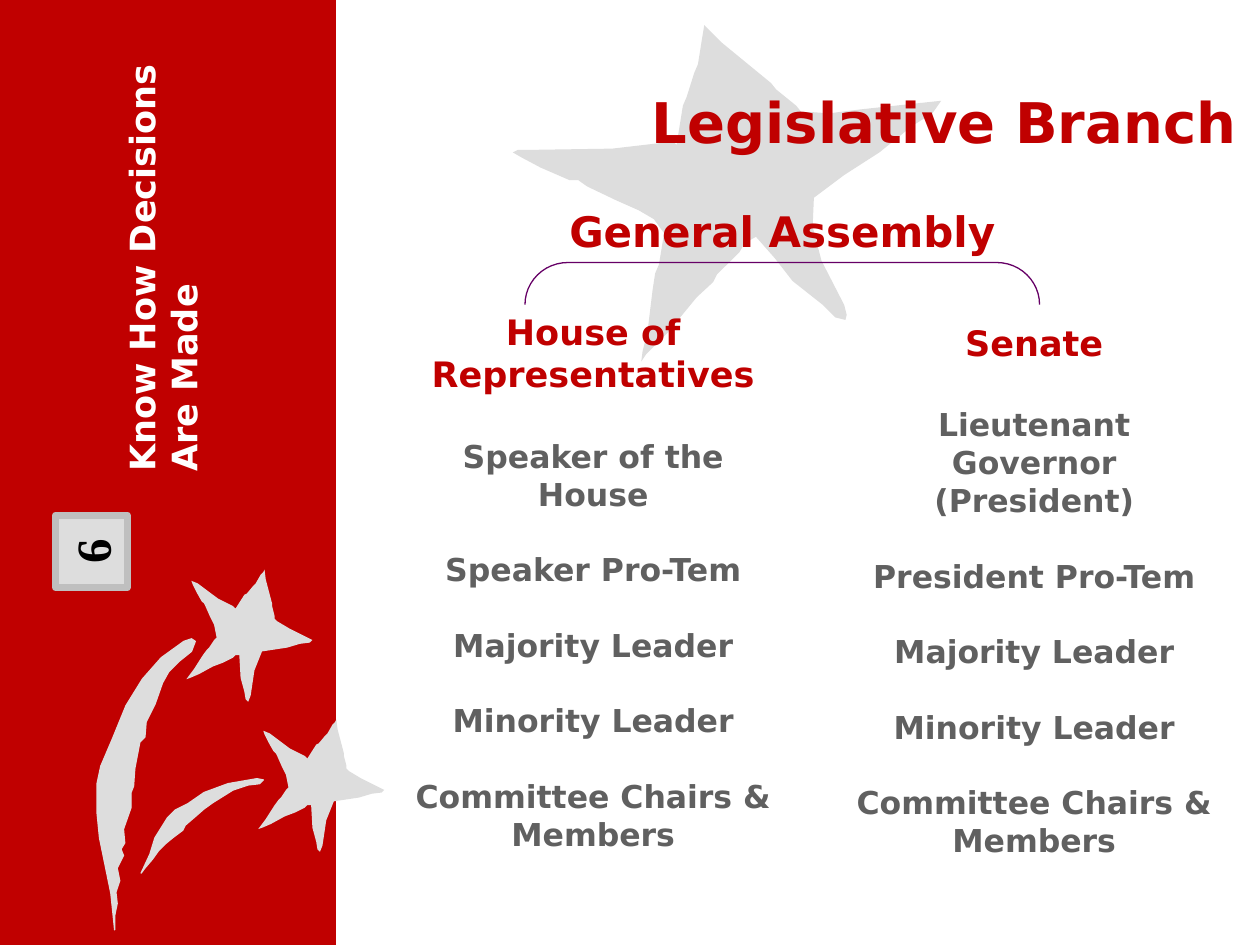
from dataclasses import dataclass

from lxml.etree import SubElement
from pptx import Presentation
from pptx.dml.color import RGBColor
from pptx.enum.shapes import MSO_SHAPE
from pptx.enum.text import MSO_ANCHOR, MSO_AUTO_SIZE, PP_ALIGN
from pptx.oxml.ns import qn
from pptx.util import Pt

RED = RGBColor(0xC0, 0x00, 0x00)
PALE = RGBColor(0xDD, 0xDD, 0xDD)
GRAY = RGBColor(0x60, 0x60, 0x60)
EDGE = RGBColor(0xBF, 0xBF, 0xBF)
PLUM = RGBColor(0x66, 0x00, 0x66)
WHITE = RGBColor(0xFF, 0xFF, 0xFF)
BLACK = RGBColor(0x00, 0x00, 0x00)
SANS = "DejaVu Sans"
SERIF = "Times New Roman"
PITCH = 1.2
GRID = Pt(0.72)


@dataclass
class Box:
    left: float
    top: float
    width: float
    height: float

    def sides(self) -> tuple:
        return Pt(self.left), Pt(self.top), Pt(self.width), Pt(self.height)


@dataclass
class Chamber:
    box: Box
    name: str
    posts: list


@dataclass
class Outline:
    points: list
    right: int = 0
    down: int = 0
    edge: bool = False


BIG_STAR = [
    (537, 115), (542, 84), (545, 77), (551, 58), (554, 51), (557, 32), (559, 20),
    (573, 34), (612, 66), (616, 71), (632, 84), (636, 89), (644, 89), (658, 90),
    (682, 87), (747, 80), (740, 90), (724, 100), (698, 121), (670, 139), (646, 157),
    (645, 180), (652, 207), (670, 242), (672, 250), (671, 254), (663, 252),
    (653, 242), (629, 223), (615, 205), (600, 188), (591, 193), (587, 200),
    (569, 218), (566, 224), (553, 236), (530, 264), (513, 281), (509, 287),
    (510, 279), (514, 263), (518, 230), (520, 217), (523, 210), (526, 192),
    (527, 185), (519, 174), (507, 167), (489, 159), (466, 148), (459, 143),
    (452, 143), (429, 133), (414, 125), (407, 121), (411, 119), (422, 119),
    (486, 118), (529, 113), (535, 113)]
STAR = [
    (187, 483), (194, 472), (196, 471), (201, 465), (203, 463), (207, 456),
    (209, 454), (210, 452), (211, 460), (216, 479), (216, 481), (218, 489),
    (218, 491), (220, 493), (230, 499), (248, 508), (246, 510), (238, 511),
    (228, 514), (208, 517), (202, 532), (199, 552), (197, 557), (195, 555),
    (194, 549), (191, 538), (190, 520), (187, 520), (185, 522), (177, 526),
    (169, 529), (158, 535), (151, 538), (148, 539), (154, 531), (161, 520),
    (164, 516), (166, 514), (170, 508), (172, 506), (170, 496), (167, 490),
    (163, 481), (162, 479), (160, 477), (156, 470), (153, 464), (152, 461),
    (157, 463), (173, 475), (185, 481)]
SHORT_TAIL = [
    (112, 693), (119, 678), (123, 665), (133, 649), (139, 643), (149, 638),
    (162, 629), (181, 622), (204, 618), (209, 619), (206, 622), (197, 623),
    (185, 627), (169, 637), (162, 642), (154, 649), (147, 655), (145, 659),
    (137, 665), (131, 670), (126, 675), (121, 682), (115, 689)]
LONG_TAIL = [
    (91, 738), (88, 709), (79, 665), (77, 645), (77, 622), (80, 608), (89, 587),
    (100, 560), (113, 539), (128, 522), (146, 509), (152, 507), (155, 509),
    (152, 517), (142, 525), (134, 533), (129, 542), (123, 559), (116, 573),
    (115, 585), (111, 589), (107, 610), (106, 624), (104, 629), (104, 641),
    (98, 658), (99, 669), (96, 674), (98, 679), (93, 689), (95, 699), (92, 708),
    (93, 717), (91, 727)]
COMETS = [Outline(STAR, 57, 119), Outline(SHORT_TAIL, edge=True),
          Outline(STAR), Outline(LONG_TAIL, edge=True)]

CHAMBERS = [
    Chamber(Box(228, 174, 222, 324), "House of Representatives",
            ["Speaker of the House", "Speaker Pro-Tem"]),
    Chamber(Box(480, 180, 222, 324), "Senate",
            ["Lieutenant Governor (President)", "President Pro-Tem"])]
SHARED = ["Majority Leader", "Minority Leader", "Committee Chairs & Members"]


def write(frame, text: str, size: int = 18, color: RGBColor = GRAY, font: str = SANS,
          align=PP_ALIGN.CENTER, gap: float = 0, more: bool = False) -> None:
    par = frame.add_paragraph() if more else frame.paragraphs[0]
    par.alignment = align
    par.line_spacing = Pt(size * PITCH)
    par.space_before = Pt(gap)
    props = par._p.get_or_add_pPr()
    props.set("marL", "0")
    props.set("indent", "0")
    SubElement(props, qn("a:buNone"))
    run = par.add_run()
    run.text = text
    run.font.size = Pt(size)
    run.font.name = font
    run.font.bold = True
    run.font.color.rgb = color


def place(holder, box: Box, anchor=MSO_ANCHOR.TOP):
    holder.left, holder.top, holder.width, holder.height = box.sides()
    frame = holder.text_frame
    frame.word_wrap = True
    frame.auto_size = MSO_AUTO_SIZE.NONE
    frame.vertical_anchor = anchor
    return frame


def label(slide, box: Box, turn: int = 0):
    shape = slide.shapes.add_textbox(*box.sides())
    shape.rotation = turn
    shape.text_frame.word_wrap = True
    return shape.text_frame


def paint(shape, fill: RGBColor = None, line: RGBColor = None, weight: float = 0.75):
    shape.shadow.inherit = False
    if fill is None:
        shape.fill.background()
    else:
        shape.fill.solid()
        shape.fill.fore_color.rgb = fill
    if line is None:
        shape.line.fill.background()
    else:
        shape.line.color.rgb = line
        shape.line.width = Pt(weight)
    return shape


def trace(slide, form: Outline):
    spots = [(x + form.right, y + form.down) for x, y in form.points]
    pen = slide.shapes.build_freeform(*spots[0], scale=GRID)
    pen.add_line_segments(spots[1:], close=True)
    return paint(pen.convert_to_shape(), PALE, PALE if form.edge else None)


def list_posts(holder, part: Chamber) -> None:
    frame = place(holder, part.box)
    write(frame, part.name, size=20, color=RED)
    for spot, post in enumerate(part.posts + SHARED):
        write(frame, post, gap=(18 if spot else 20) * PITCH, more=True)


def main() -> None:
    deck = Presentation()
    deck.slide_width, deck.slide_height = Pt(720), Pt(540)
    slide = deck.slides.add_slide(deck.slide_layouts[3])
    title, *bodies = slide.placeholders

    star = trace(slide, Outline(BIG_STAR))
    title.element.addprevious(star.element)
    write(place(title, Box(318, 36, 396, 66), MSO_ANCHOR.MIDDLE), "Legislative Branch",
          size=32, color=RED, align=PP_ALIGN.RIGHT)
    write(label(slide, Box(276, 114, 342, 48)), "General Assembly", size=24, color=RED)
    for holder, part in zip(bodies, CHAMBERS):
        list_posts(holder, part)

    brace = slide.shapes.add_shape(MSO_SHAPE.LEFT_BRACKET, *Box(435, 15, 24, 294).sides())
    brace.adjustments[0] = 1.02
    brace.rotation = 90
    paint(brace, line=PLUM)

    paint(slide.shapes.add_shape(MSO_SHAPE.RECTANGLE, *Box(0, 0, 192, 540).sides()), RED)
    for form in COMETS:
        trace(slide, form)
    write(label(slide, Box(-30.5, 125, 247.5, 56), 270), "Know How Decisions Are Made",
          size=20, color=WHITE, align=PP_ALIGN.LEFT)

    badge = slide.shapes.add_shape(MSO_SHAPE.RECTANGLE, *Box(31.5, 294.5, 41.5, 41).sides())
    badge.rotation = 270
    paint(badge, PALE, EDGE, 4)
    write(badge.text_frame, "6", size=28, color=BLACK, font=SERIF)
    deck.save("out.pptx")


if __name__ == "__main__":
    main()
